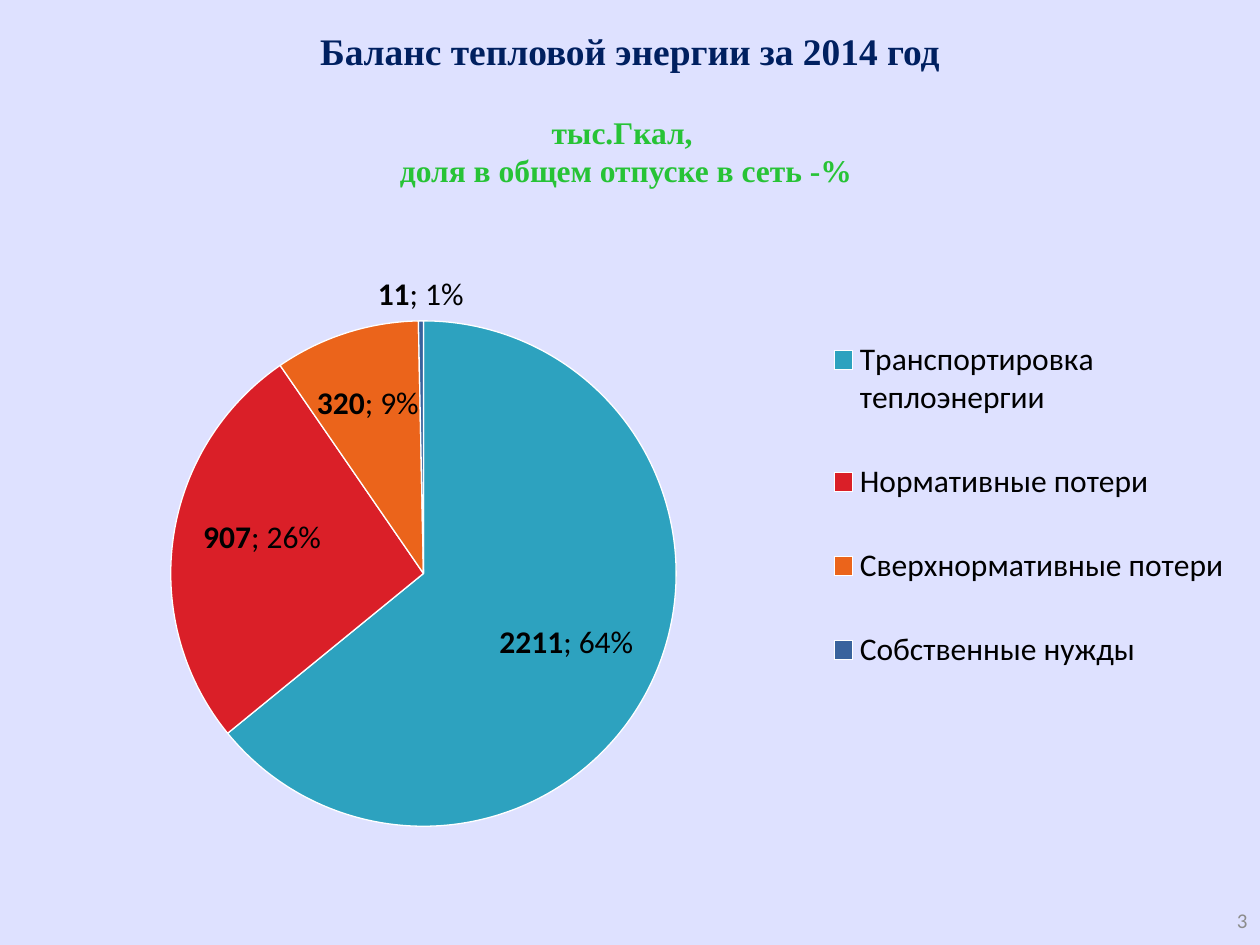
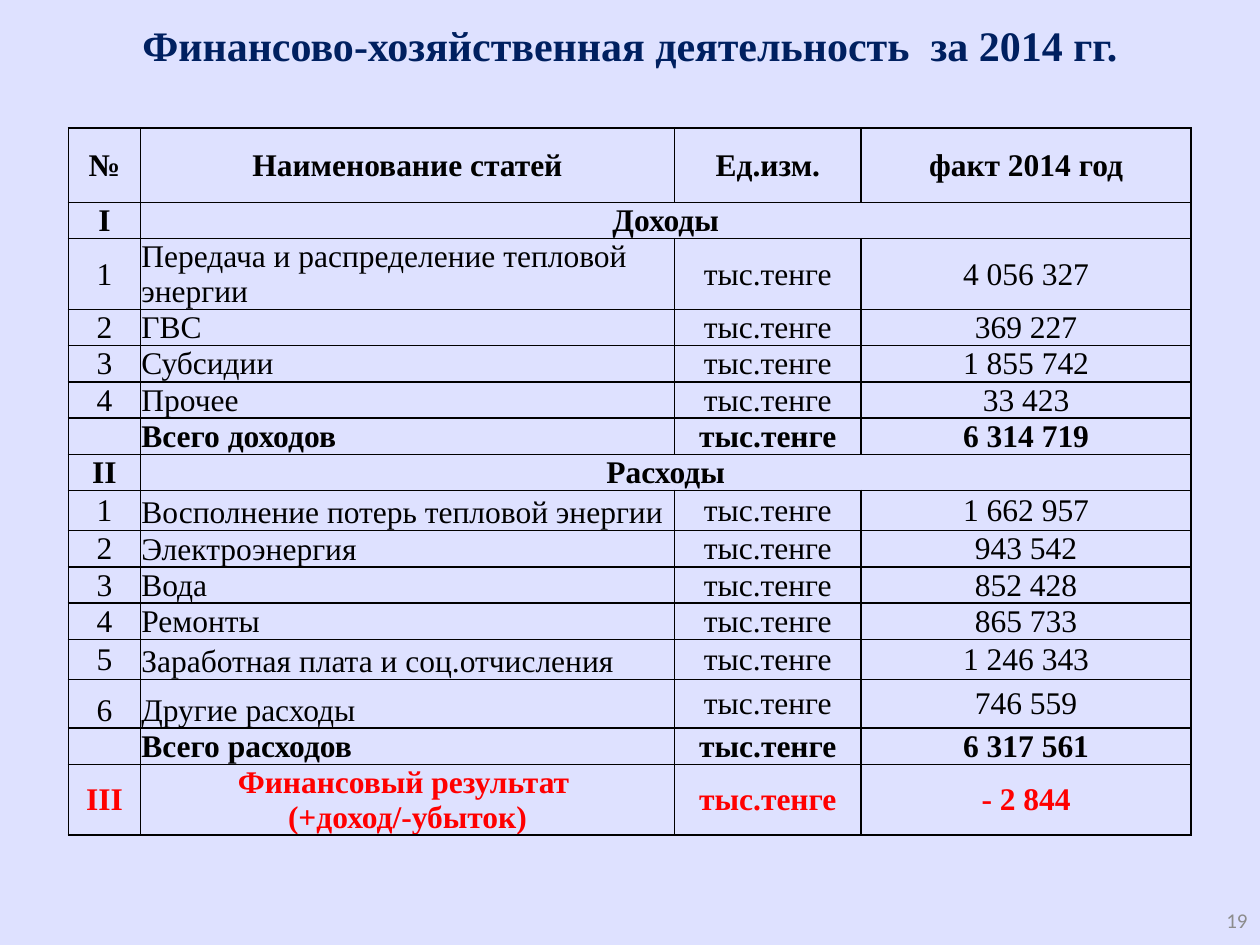
import pptx
import pptx.chart.data
import pptx.dml.color
import pptx.enum.chart
import pptx.enum.text
import pptx.oxml.ns
import pptx.util
from lxml import etree

Cm = pptx.util.Cm
Pt = pptx.util.Pt
RGBColor = pptx.dml.color.RGBColor
Align = pptx.enum.text.PP_ALIGN
Anchor = pptx.enum.text.MSO_ANCHOR
LabelPosition = pptx.enum.chart.XL_LABEL_POSITION
qn = pptx.oxml.ns.qn

# Shared look
LAVENDER = RGBColor(0xDE, 0xE1, 0xFF)
NAVY = RGBColor(0x00, 0x20, 0x60)
GREEN = RGBColor(0x27, 0xC3, 0x36)
GREY = RGBColor(0x8C, 0x8C, 0x8C)
BLACK = RGBColor(0, 0, 0)
WHITE = RGBColor(0xFF, 0xFF, 0xFF)
RED = RGBColor(0xFF, 0, 0)
TEAL = RGBColor(0x2D, 0xA2, 0xBF)
CRIMSON = RGBColor(0xDA, 0x1F, 0x28)
ORANGE = RGBColor(0xEB, 0x64, 0x1B)
BLUE = RGBColor(0x39, 0x63, 0x9D)
SERIF = "Times New Roman"
SANS = "Calibri"
WIDTH, HEIGHT = Cm(25.4), Cm(19.05)
TITLE_ONLY = 5

# Heat balance: name, value, share, colour, label position, label shift in cm
PIE_WIDTH, PIE_HEIGHT = 24.41, 14.3
BALANCE = [
    ("Транспортировка теплоэнергии", 2211, "64%", TEAL, LabelPosition.CENTER, (0.58, 0.3)),
    ("Нормативные потери", 907, "26%", CRIMSON, LabelPosition.CENTER, (-0.73, -0.36)),
    ("Сверхнормативные потери", 320, "9%", ORANGE, LabelPosition.CENTER, (-0.34, -1)),
    ("Собственные нужды", 11, "1%", BLUE, LabelPosition.OUTSIDE_END, None),
]

# Financial table: row height in cm, then the cells
UNIT = "тыс.тенге"
COLUMN_WIDTHS = [1.45, 10.77, 3.76, 6.65]
ROW = 0.73
FINANCES = [
    (1.5, "№", "Наименование статей", "Ед.изм.", "факт 2014 год"),
    (ROW, "I", "Доходы"),
    (1.35, "1", "Передача и распределение тепловой энергии", UNIT, "4 056 327"),
    (ROW, "2", "ГВС", UNIT, "369 227"),
    (ROW, "3", "Субсидии", UNIT, "1 855 742"),
    (ROW, "4", "Прочее", UNIT, "33 423"),
    (ROW, "", "Всего доходов", UNIT, "6 314 719"),
    (ROW, "II", "Расходы"),
    (0.81, "1", "Восполнение потерь тепловой энергии", UNIT, "1 662 957"),
    (ROW, "2", "Электроэнергия", UNIT, "943 542"),
    (ROW, "3", "Вода", UNIT, "852 428"),
    (ROW, "4", "Ремонты", UNIT, "865 733"),
    (0.81, "5", "Заработная плата и соц.отчисления", UNIT, "1 246 343"),
    (0.98, "6", "Другие расходы", UNIT, "746 559"),
    (ROW, "", "Всего расходов", UNIT, "6 317 561"),
    (1.35, "III", "Финансовый результат \n(+доход/-убыток)", UNIT, "- 2 844"),
]
EXPENSES_START = 8
RESULT_ROW = len(FINANCES) - 1


def write(frame, text, size, color, font=SERIF, bold=False, align=Align.CENTER):
    frame.text = text
    for paragraph in frame.paragraphs:
        paragraph.alignment = align
        paragraph.font.size = Pt(size)
        paragraph.font.name = font
        paragraph.font.bold = bold
        paragraph.font.color.rgb = color


def set_title(slide, text, top, height, size, color):
    title = slide.shapes.title
    title.left, title.top, title.width, title.height = 0, top, WIDTH, height
    frame = title.text_frame
    frame.auto_size = pptx.enum.text.MSO_AUTO_SIZE.NONE
    frame.vertical_anchor = Anchor.MIDDLE
    write(frame, text, size, color, bold=True)


def add_text(slide, text, left, top, width, height, size, color, **style):
    frame = slide.shapes.add_textbox(left, top, width, height).text_frame
    frame.word_wrap = True
    frame.vertical_anchor = Anchor.MIDDLE
    write(frame, text, size, color, **style)


def add_page_number(slide, number):
    add_text(slide, number, Cm(19.48), Cm(18.03), Cm(5.92), Cm(1.02), 12, GREY,
             font=SANS, align=Align.RIGHT)


def place(element, index, x, y, w=None, h=None, **modes):
    """Give a chart part a manual layout, with lengths in cm."""
    for old in element.findall(qn("c:layout")):
        element.remove(old)
    layout = etree.Element(qn("c:layout"))
    manual = etree.SubElement(layout, qn("c:manualLayout"))
    for tag, mode in modes.items():
        etree.SubElement(manual, qn("c:" + tag)).set("val", mode)
    lengths = (("x", x, PIE_WIDTH), ("y", y, PIE_HEIGHT),
               ("w", w, PIE_WIDTH), ("h", h, PIE_HEIGHT))
    for tag, length, whole in lengths:
        if length is not None:
            etree.SubElement(manual, qn("c:" + tag)).set("val", f"{length / whole:.4f}")
    element.insert(index, layout)


def label_slice(point, value, share, position):
    label = point.data_label
    paragraph = label.text_frame.paragraphs[0]
    for text, bold in ((str(value), True), (f"; {share}", False)):
        run = paragraph.add_run()
        run.text = text
        run.font.size = Pt(18)
        run.font.name = SANS
        run.font.bold = bold
        run.font.color.rgb = BLACK
    label.position = position


def add_balance_pie(slide):
    data = pptx.chart.data.CategoryChartData(number_format="0")
    data.categories = [item[0] for item in BALANCE]
    data.add_series("Series 1", [item[1] for item in BALANCE])
    chart = slide.shapes.add_chart(
        pptx.enum.chart.XL_CHART_TYPE.PIE,
        Cm(0.58), Cm(3.96), Cm(PIE_WIDTH), Cm(PIE_HEIGHT), data).chart
    chart.has_title = False
    chart.font.size = Pt(18)
    chart.font.name = SANS
    chart.font.color.rgb = BLACK
    chart.plots[0].vary_by_categories = True

    # Slices and their labels
    series = chart.plots[0].series[0]
    for index, (_, value, share, color, position, _) in enumerate(BALANCE):
        point = series.points[index]
        point.format.fill.solid()
        point.format.fill.fore_color.rgb = color
        point.format.line.color.rgb = WHITE
        point.format.line.width = Pt(0.75)
        label_slice(point, value, share, position)
    series.data_labels.show_value = True
    series.data_labels.show_percentage = True
    for label, (*_, shift) in zip(chart.element.iter(qn("c:dLbl")), BALANCE):
        label.find(qn("c:showPercent")).set("val", "1")
        if shift:
            place(label, 1, *shift)

    # Plot and legend areas
    chart.has_legend = True
    chart.legend.position = pptx.enum.chart.XL_LEGEND_POSITION.RIGHT
    chart.legend.include_in_layout = False
    plot_area = next(chart.element.iter(qn("c:plotArea")))
    legend = next(chart.element.iter(qn("c:legend")))
    place(plot_area, 0, 2.86, 2.51, 10.19, 10.19,
          layoutTarget="inner", xMode="edge", yMode="edge")
    place(legend, 1, 16.01, 1.98, 8.3, 8.47, xMode="edge", yMode="edge")


def add_borders(cell):
    properties = cell._tc.get_or_add_tcPr()
    for index, side in enumerate(("lnL", "lnR", "lnT", "lnB")):
        line = etree.Element(qn("a:" + side), w=str(Pt(1)))
        fill = etree.SubElement(line, qn("a:solidFill"))
        etree.SubElement(fill, qn("a:srgbClr"), val=str(BLACK))
        properties.insert(index, line)


def format_cell(cell, text, color, bold, align, anchor):
    cell.margin_left = cell.margin_right = cell.margin_top = Cm(0.02)
    cell.margin_bottom = 0
    cell.vertical_anchor = anchor
    cell.fill.background()
    write(cell.text_frame, text, 18, color, bold=bold, align=align)
    add_borders(cell)


def add_finance_table(slide):
    table = slide.shapes.add_table(
        len(FINANCES), len(COLUMN_WIDTHS), Cm(1.38), Cm(2.58),
        Cm(sum(COLUMN_WIDTHS)), Cm(sum(row[0] for row in FINANCES))).table
    table.first_row = table.horz_banding = False
    for column, width in zip(table.columns, COLUMN_WIDTHS):
        column.width = Cm(width)

    for r, (height, number, *texts) in enumerate(FINANCES):
        table.rows[r].height = Cm(height)
        is_section = len(texts) == 1
        is_item = number.isdigit()
        is_total = not number
        color = RED if r == RESULT_ROW else BLACK
        texts = [number] + texts + [""] * (3 - len(texts))
        for c, text in enumerate(texts):
            left_aligned = c == 1 and (is_item or is_total)
            at_bottom = (c == 1 and EXPENSES_START <= r < RESULT_ROW) or text == "6"
            format_cell(table.cell(r, c), text, color, not is_item,
                        Align.LEFT if left_aligned else Align.CENTER,
                        Anchor.BOTTOM if at_bottom else Anchor.MIDDLE)
        if is_section:
            table.cell(r, 1).merge(table.cell(r, 3))


def main():
    deck = pptx.Presentation()
    deck.slide_width, deck.slide_height = WIDTH, HEIGHT
    background = deck.slide_master.background.fill
    background.solid()
    background.fore_color.rgb = LAVENDER
    layout = deck.slide_layouts[TITLE_ONLY]

    # Heat balance
    balance = deck.slides.add_slide(layout)
    set_title(balance, "тыс.Гкал,  \vдоля в общем отпуске в сеть -% ",
              Cm(1.98), Cm(2.13), 18, GREEN)
    add_text(balance, "Баланс тепловой энергии за 2014 год",
             0, 0, WIDTH, Cm(2.02), 21.4, NAVY, bold=True)
    add_balance_pie(balance)
    add_page_number(balance, "3")

    # Financial results
    finances = deck.slides.add_slide(layout)
    set_title(finances, "Финансово-хозяйственная деятельность  за 2014 гг.",
              0, Cm(1.8), 24, NAVY)
    add_finance_table(finances)
    add_page_number(finances, "19")

    deck.save("out.pptx")


if __name__ == "__main__":
    main()
